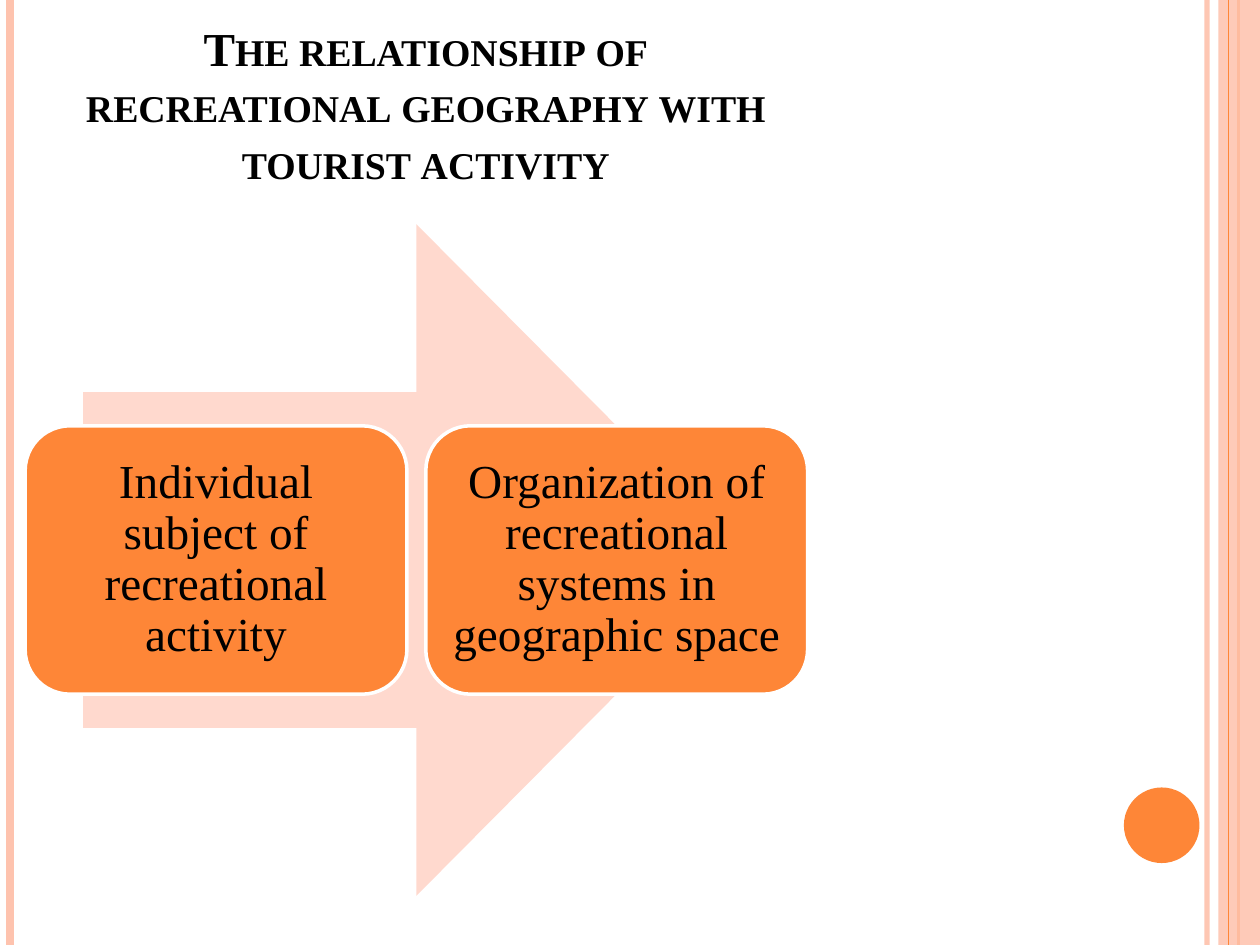
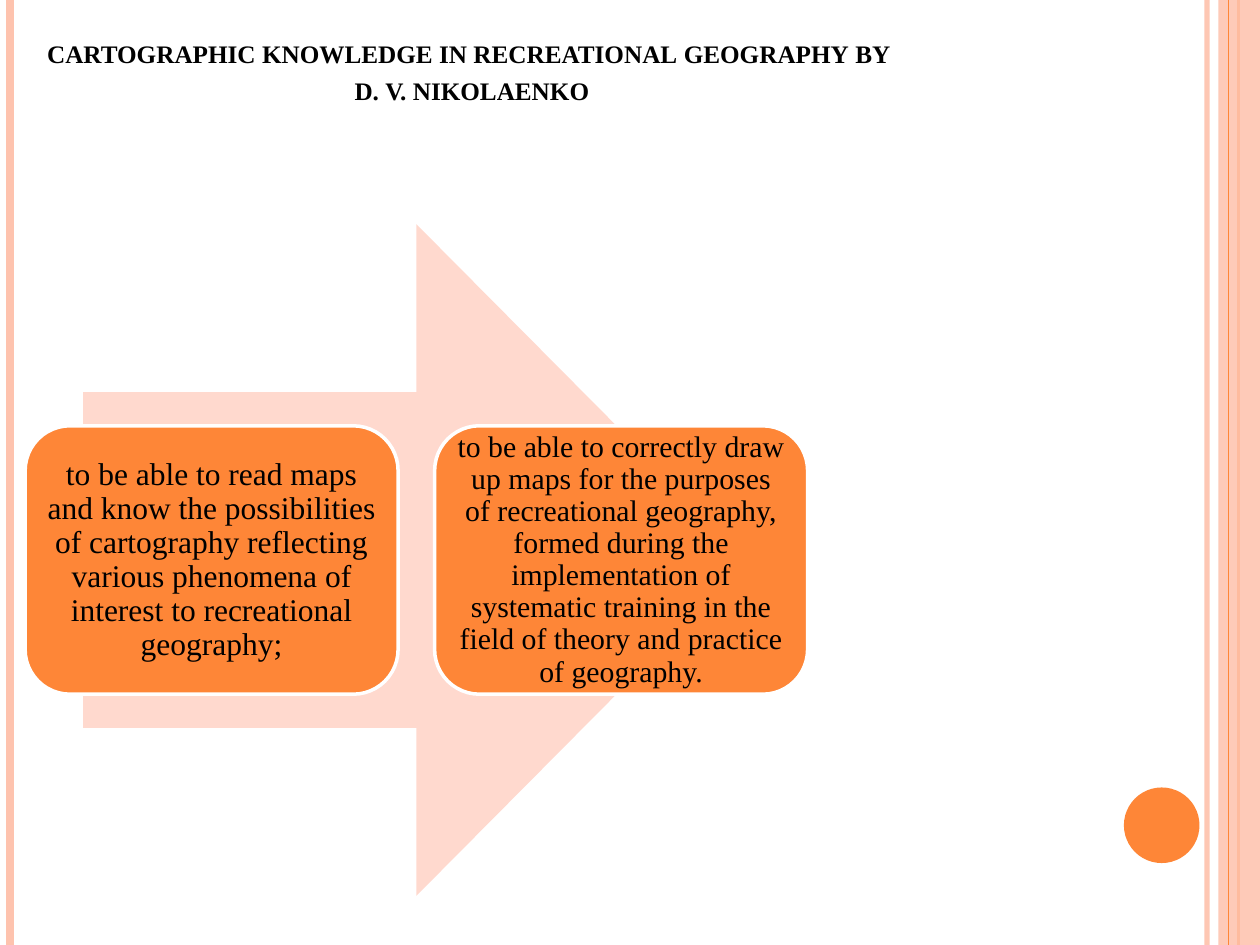
import pptx
import pptx.dml.color
import pptx.enum.shapes
import pptx.enum.text
import pptx.oxml
import pptx.oxml.ns
import pptx.util

Inches = pptx.util.Inches
Pt = pptx.util.Pt
SHAPE = pptx.enum.shapes.MSO_SHAPE
ANCHOR = pptx.enum.text.MSO_ANCHOR

COLORS = {
    "accent": "FE8637",
    "band": "FEC3AE",
    "arrow": "FFD9CE",
    "outline": "FFFFFF",
    "text": "000000",
}
FONT = "Times New Roman"
PAGE_WIDTH, PAGE_HEIGHT = 10, 7.5
BOXES_LEFT, BOXES_RIGHT, BOXES_TOP, BOX_HEIGHT = 0.2, 6.41, 3.38, 2.13


def color(name):
    return pptx.dml.color.RGBColor.from_string(COLORS[name])


def set_values(target, values):
    for attribute, value in values.items():
        setattr(target, attribute, value)


def set_opacity(element, percent):
    """Make the solid colour inside a fill or line element see-through."""
    srgb = element.find(".//" + pptx.oxml.ns.qn("a:srgbClr"))
    alpha = srgb.makeelement(pptx.oxml.ns.qn("a:alpha"), {"val": str(percent * 1000)})
    srgb.append(alpha)


def add_rule(slide, x, color_name, weight, opacity=100):
    """Draw a vertical line over the full height of the slide."""
    rule = slide.shapes.add_connector(
        pptx.enum.shapes.MSO_CONNECTOR.STRAIGHT,
        Inches(x), Inches(0), Inches(x), Inches(PAGE_HEIGHT))
    rule.line.color.rgb = color(color_name)
    rule.line.width = Pt(weight)
    properties = rule.line._get_or_add_ln().getparent()
    if opacity < 100:
        set_opacity(properties, opacity)
    properties.append(properties.makeelement(pptx.oxml.ns.qn("a:effectLst"), {}))


def add_filled(slide, preset, place, color_name, opacity=100):
    shape = slide.shapes.add_shape(preset, *map(Inches, place))
    shape.shadow.inherit = False
    shape.fill.solid()
    shape.fill.fore_color.rgb = color(color_name)
    shape.line.fill.background()
    if opacity < 100:
        set_opacity(shape.fill._xPr, opacity)
    return shape


def write_text(frame, text, size, frame_format, bold=False, line_spacing=1.0):
    set_values(frame, {"word_wrap": True, **frame_format})
    frame.text = text
    paragraph = frame.paragraphs[0]
    set_values(paragraph, {"alignment": pptx.enum.text.PP_ALIGN.CENTER,
                           "line_spacing": line_spacing})
    for run in paragraph.runs:
        set_values(run.font, {"name": FONT, "size": Pt(size), "bold": bold})
        run.font.color.rgb = color("text")
    return paragraph


def add_frame(slide):
    """Draw the side bands and the circle that every slide shares."""
    add_rule(slide, 9.58, "band", 3, opacity=93)
    add_rule(slide, 0.08, "band", 4.5)
    add_rule(slide, 9.83, "accent", 1.5)
    add_filled(slide, SHAPE.RECTANGLE, (9.67, 0, 0.33, PAGE_HEIGHT), "band", opacity=87)
    add_rule(slide, 9.75, "accent", 0.75)
    add_filled(slide, SHAPE.OVAL, (8.92, 6.25, 0.6, 0.6), "accent")


def add_title(slide, text, place, size):
    title = slide.shapes.add_textbox(*map(Inches, place))
    paragraph = write_text(title.text_frame, text, size,
                           {"vertical_anchor": ANCHOR.BOTTOM}, bold=True)
    for run in paragraph.runs:
        run.font._element.set("cap", "small")


def add_arrow_process(slide, steps, box_width, inset):
    """Lay the steps, as (text, size), evenly across the big arrow."""
    add_filled(slide, SHAPE.RIGHT_ARROW, (0.66, 1.78, 5.29, 5.33), "arrow")
    pitch = (BOXES_RIGHT - BOXES_LEFT - box_width) / (len(steps) - 1)
    margins = {f"margin_{side}": Inches(inset)
               for side in ("left", "top", "right", "bottom")}
    for index, (text, size) in enumerate(steps):
        place = (BOXES_LEFT + index * pitch, BOXES_TOP, box_width, BOX_HEIGHT)
        step = add_filled(slide, SHAPE.ROUNDED_RECTANGLE, place, "accent")
        step.line.color.rgb = color("outline")
        step.line.width = Pt(2)
        write_text(step.text_frame, text, size,
                   {"vertical_anchor": ANCHOR.MIDDLE, **margins}, line_spacing=0.9)


def main():
    deck = pptx.Presentation()
    set_values(deck, {"slide_width": Inches(PAGE_WIDTH),
                      "slide_height": Inches(PAGE_HEIGHT)})
    blank = deck.slide_layouts[6]

    relationship = deck.slides.add_slide(blank)
    add_frame(relationship)
    add_title(relationship,
              "The relationship of recreational geography with tourist activity",
              (0.5, 0.3, 5.76, 1.25), 27)
    add_arrow_process(relationship, [
        ("Individual subject of recreational activity", 27),
        ("Organization of recreational systems in geographic space", 27),
    ], box_width=3.03, inset=0.11)

    knowledge = deck.slides.add_slide(blank)
    add_frame(knowledge)
    add_title(knowledge,
              "cartographic knowledge in recreational geography by \vd. v. nikolaenko",
              (-0.75, 0.29, 8.99, 0.61), 18)
    add_arrow_process(knowledge, [
        ("to be able to read maps and know the possibilities of cartography "
         "reflecting various phenomena of interest to recreational geography;", 18),
        ("to be able to correctly draw up maps for the purposes of recreational "
         "geography, formed during the implementation of systematic training in "
         "the field of theory and practice of geography.", 17),
    ], box_width=2.96, inset=0.07)

    deck.save("out.pptx")


if __name__ == "__main__":
    main()
